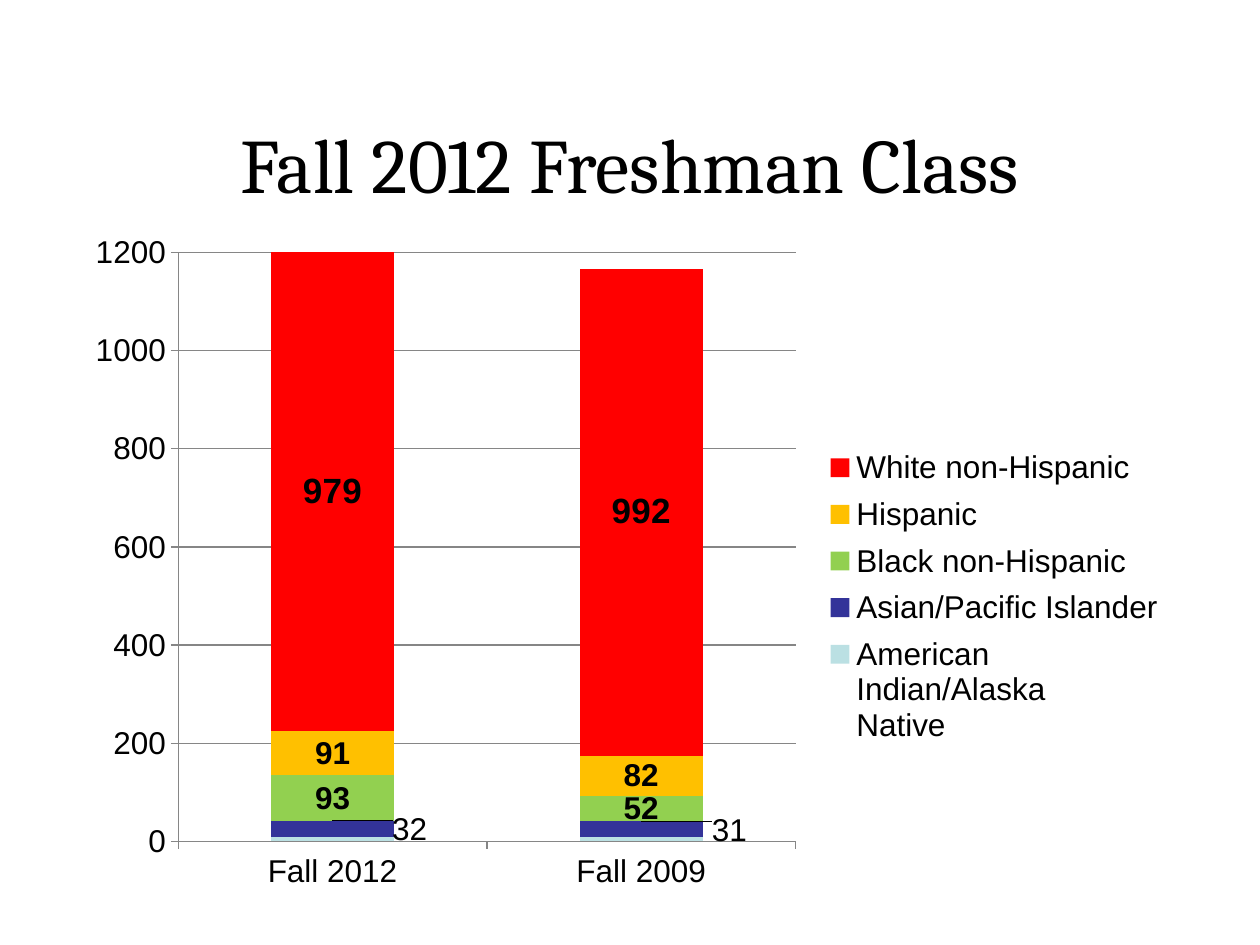
from lxml import etree
from pptx import Presentation
from pptx.chart.data import CategoryChartData
from pptx.dml.color import RGBColor
from pptx.enum.chart import XL_CHART_TYPE as ChartType
from pptx.enum.chart import XL_LABEL_POSITION as LabelPosition
from pptx.enum.chart import XL_LEGEND_POSITION as LegendPosition
from pptx.enum.chart import XL_TICK_MARK as TickMark
from pptx.enum.text import MSO_ANCHOR, PP_ALIGN
from pptx.oxml.ns import qn
from pptx.util import Pt

BLACK = RGBColor(0x00, 0x00, 0x00)
GRAY = RGBColor(0x86, 0x86, 0x86)

TITLE = "Fall 2012 Freshman Class"
TERMS = ["Fall 2012", "Fall 2009"]
# name, students per term, fill, label size (None: no label), bold label
GROUPS = [
    ("American Indian/Alaska Native", (10, 10), RGBColor(0xBB, 0xE0, 0xE3), None, False),
    ("Asian/Pacific Islander", (32, 31), RGBColor(0x33, 0x33, 0x99), 18, False),
    ("Black non-Hispanic", (93, 52), RGBColor(0x92, 0xD0, 0x50), 18, True),
    ("Hispanic", (91, 82), RGBColor(0xFF, 0xC0, 0x00), 18, True),
    ("White non-Hispanic", (979, 992), RGBColor(0xFF, 0x00, 0x00), 20, True),
]
# Label shifts, as fractions of the chart, that move the thin bar's values aside
ASIDE_GROUP = 1
ASIDE_SHIFTS = [(0.07, -0.02), (0.08, -0.02)]


def make_layout(**values):
    """Return a c:layout element; values are fractions of the chart."""
    layout = etree.Element(qn("c:layout"))
    manual = etree.SubElement(layout, qn("c:manualLayout"))
    for tag, value in values.items():
        etree.SubElement(manual, qn(f"c:{tag}")).set("val", str(value))
    return layout


def style_font(font, size, bold=False):
    font.name = "Arial"
    font.size = Pt(size)
    font.bold = bold
    font.color.rgb = BLACK


def add_title(page):
    box = page.shapes.add_textbox(Pt(54), Pt(48), Pt(612), Pt(90))
    frame = box.text_frame
    frame.word_wrap = True
    frame.vertical_anchor = MSO_ANCHOR.MIDDLE
    para = frame.paragraphs[0]
    para.alignment = PP_ALIGN.CENTER
    span = para.add_run()
    span.text = TITLE
    span.font.name = "Cambria"
    span.font.size = Pt(44)
    span.font.color.rgb = BLACK


def style_axes(chart):
    for axis in (chart.category_axis, chart.value_axis):
        axis.major_tick_mark = TickMark.OUTSIDE
        axis.minor_tick_mark = TickMark.NONE
        axis.format.line.color.rgb = GRAY
        style_font(axis.tick_labels.font, 18)
    value_axis = chart.value_axis
    value_axis.minimum_scale = 0
    value_axis.maximum_scale = 1200
    value_axis.major_unit = 200
    value_axis.has_major_gridlines = True
    value_axis.major_gridlines.format.line.color.rgb = GRAY


def style_series(plot):
    for series, (_, _, color, size, bold) in zip(plot.series, GROUPS):
        series.format.fill.solid()
        series.format.fill.fore_color.rgb = color
        series.invert_if_negative = False
        if size:
            labels = series.data_labels
            labels.show_value = True
            style_font(labels.font, size, bold)
    aside = plot.series[ASIDE_GROUP]
    for index, (x, y) in enumerate(ASIDE_SHIFTS):
        label = aside.points[index].data_label
        style_font(label.font, 18)
        label.position = LabelPosition.INSIDE_END
    for element, (x, y) in zip(aside.data_labels._element.findall(qn("c:dLbl")), ASIDE_SHIFTS):
        element.find(qn("c:idx")).addnext(make_layout(x=x, y=y))


def place_parts(chart):
    plot_area = chart.plots[0]._element.getparent()
    legend = chart.legend._element
    for parent in (plot_area, legend):
        for old in parent.findall(qn("c:layout")):
            parent.remove(old)
    plot_area.insert(0, make_layout(layoutTarget="inner", xMode="edge", yMode="edge",
                                    x=0.095, y=0.047, w=0.56, h=0.863))
    legend.find(qn("c:legendPos")).addnext(
        make_layout(xMode="edge", yMode="edge", x=0.68, y=0.32, w=0.31, h=0.41))


def add_enrollment_chart(page):
    data = CategoryChartData()
    data.categories = TERMS
    for name, counts, *_ in GROUPS:
        data.add_series(name, counts)
    chart = page.shapes.add_chart(ChartType.COLUMN_STACKED, Pt(42), Pt(126),
                                  Pt(630), Pt(390), data).chart
    style_font(chart.font, 18)
    chart.has_title = False
    chart.has_legend = True
    chart.legend.position = LegendPosition.RIGHT
    chart.legend.include_in_layout = False
    style_font(chart.legend.font, 18)
    plot = chart.plots[0]
    plot.gap_width = 150
    plot.overlap = 100
    plot.vary_by_categories = False
    style_axes(chart)
    style_series(plot)
    place_parts(chart)


def main():
    deck = Presentation()
    deck.slide_width, deck.slide_height = Pt(720), Pt(540)
    page = deck.slides.add_slide(deck.slide_layouts[6])
    add_title(page)
    add_enrollment_chart(page)
    deck.save("out.pptx")


if __name__ == "__main__":
    main()
